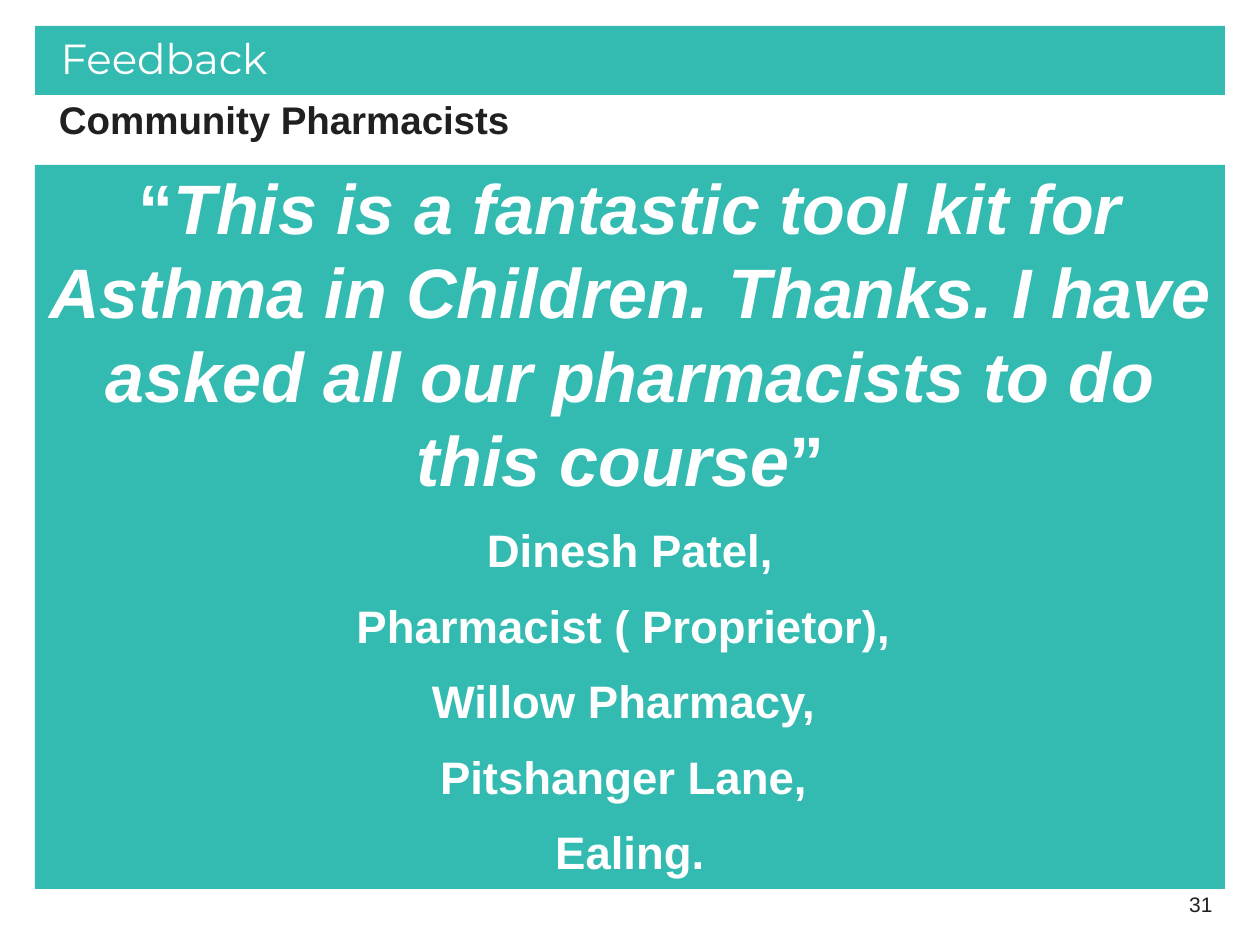
from pptx import Presentation
from pptx.dml.color import RGBColor
from pptx.enum.shapes import MSO_SHAPE
from pptx.enum.text import MSO_ANCHOR as ANCHOR, MSO_AUTO_SIZE as AUTO, PP_ALIGN as ALIGN
from pptx.util import Pt

PX = 914400 // 126
TEAL = RGBColor(0x33, 0xBB, 0xB1)
WHITE = RGBColor(0xFF, 0xFF, 0xFF)
INK = RGBColor(0x20, 0x20, 0x20)
QUOTE = ("This is a fantastic tool kit for Asthma in Children. Thanks. "
         "I have asked all our pharmacists to do this course")
SIGNATURE = ["Dinesh Patel,", "Pharmacist ( Proprietor), ", "Willow Pharmacy, ",
             "Pitshanger Lane, ", "Ealing."]


def emu(box):
    return [v * PX for v in box]


def place(sp, box):
    sp.left, sp.top, sp.width, sp.height = emu(box)


def set_frame(sp, inset=None, anchor=ANCHOR.TOP):
    tf = sp.text_frame
    tf.word_wrap = True
    tf.auto_size = AUTO.NONE
    tf.vertical_anchor = anchor
    if inset is not None:
        tf.margin_left = tf.margin_top = tf.margin_right = tf.margin_bottom = inset * PX
    return tf


def fill_teal(sp):
    sp.fill.solid()
    sp.fill.fore_color.rgb = TEAL
    sp.line.fill.background()


def format_paragraph(p, align=ALIGN.LEFT, before=0, after=0, indent=0):
    p.alignment = align
    p.space_before, p.space_after = Pt(before), Pt(after)
    p.line_spacing = 1.0
    if indent:
        p._p.get_or_add_pPr().set("marL", str(indent * PX))


def add_text(p, text, size=12, font="Arial", color=INK, bold=False, italic=False):
    r = p.add_run()
    r.text = text
    r.font.size, r.font.name = Pt(size), font
    r.font.bold, r.font.italic = bold, italic
    r.font.color.rgb = color


def title_band(s, box):
    sp = s.shapes.title
    place(sp, box)
    fill_teal(sp)
    p = set_frame(sp).paragraphs[0]
    format_paragraph(p, before=6, indent=13)
    add_text(p, "Feedback", size=24, font="Montserrat", color=WHITE)


def subtitle(s, box):
    sp = s.shapes.add_textbox(*emu(box))
    p = set_frame(sp, inset=0).paragraphs[0]
    format_paragraph(p, before=6, after=6, indent=24)
    add_text(p, "Community Pharmacists", size=22, bold=True)


def quote_panel(s, box):
    sp = s.shapes.add_shape(MSO_SHAPE.RECTANGLE, *emu(box))
    sp.shadow.inherit = False
    fill_teal(sp)
    tf = set_frame(sp, inset=0)
    p = tf.paragraphs[0]
    format_paragraph(p, align=ALIGN.CENTER, before=6, after=6)
    for text, italic in (("“", False), (QUOTE, True), ("” ", False)):
        add_text(p, text, size=40, color=WHITE, bold=True, italic=italic)
    for line in SIGNATURE:
        p = tf.add_paragraph()
        format_paragraph(p, align=ALIGN.CENTER, before=6, after=6)
        add_text(p, line, size=26, color=WHITE, bold=True)


def page_number(s, box):
    sp = s.shapes.add_textbox(*emu(box))
    p = set_frame(sp, anchor=ANCHOR.MIDDLE).paragraphs[0]
    format_paragraph(p, align=ALIGN.RIGHT)
    add_text(p, "31")


def main():
    prs = Presentation()
    prs.slide_width, prs.slide_height = emu((1260, 945))
    s = prs.slides.add_slide(prs.slide_layouts[5])
    left, width = 35, 1190
    title_band(s, (left, 26, width, 69))
    subtitle(s, (left, 96, width, 59))
    page_number(s, (931, 879, 294, 50))
    quote_panel(s, (left, 165, width, 724))
    prs.save("out.pptx")


if __name__ == "__main__":
    main()
